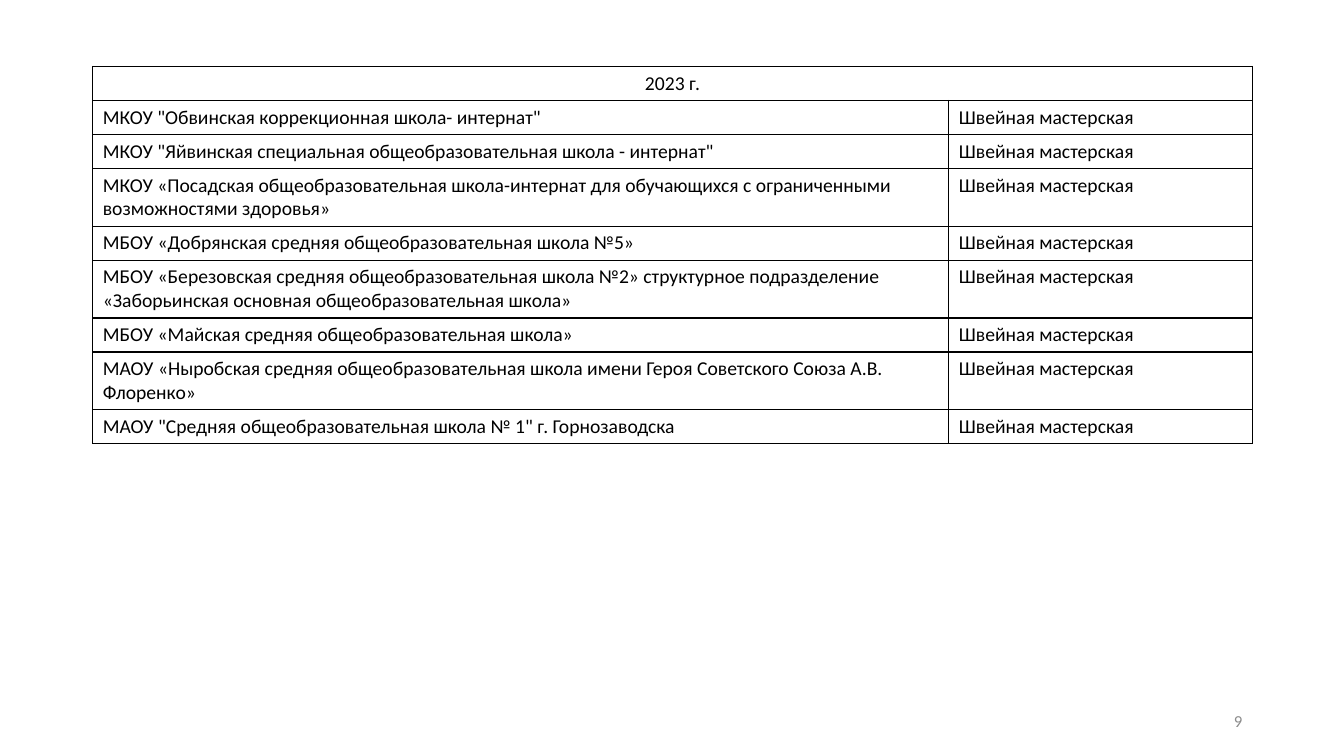
from lxml import etree
from pptx import Presentation
from pptx.dml.color import RGBColor
from pptx.enum.text import MSO_ANCHOR, PP_ALIGN
from pptx.oxml.ns import qn
from pptx.util import Inches, Pt

LEFT, CENTER, RIGHT = PP_ALIGN.LEFT, PP_ALIGN.CENTER, PP_ALIGN.RIGHT
MIDDLE = MSO_ANCHOR.MIDDLE

# Content
YEAR = "2023 г."
WORKSHOP = "Швейная мастерская"
SCHOOLS = [
    'МКОУ "Обвинская коррекционная школа- интернат"',
    'МКОУ "Яйвинская специальная общеобразовательная школа - интернат"',
    "МКОУ «Посадская общеобразовательная школа-интернат для обучающихся "
    "с ограниченными возможностями здоровья»",
    "МБОУ «Добрянская средняя общеобразовательная школа №5»",
    "МБОУ «Березовская средняя общеобразовательная школа №2» структурное "
    "подразделение «Заборьинская основная общеобразовательная школа»",
    "МБОУ «Майская средняя общеобразовательная школа»",
    "МАОУ «Ныробская средняя общеобразовательная школа имени Героя "
    "Советского Союза А.В. Флоренко»",
    'МАОУ "Средняя общеобразовательная школа № 1" г. Горнозаводска',
]
PAGE_NUMBER = "9"

# Style
FONT = "Calibri"
BLACK, GREY = "000000", "8C8C8C"
COLUMN_WIDTHS = (8.49, 3.01)
YEAR_HEIGHT, SCHOOL_HEIGHT = 0.28, 0.25


def color(hex_value):
    return RGBColor.from_string(hex_value)


def write(text_frame, text, size, hex_value, align):
    paragraph = text_frame.paragraphs[0]
    paragraph.alignment = align
    run = paragraph.add_run()
    run.text = text
    run.font.name = FONT
    run.font.size = Pt(size)
    run.font.color.rgb = color(hex_value)


def outline(cell):
    properties = cell._tc.get_or_add_tcPr()
    for side in ("a:lnL", "a:lnR", "a:lnT", "a:lnB"):
        line = etree.SubElement(properties, qn(side), w=str(Pt(1)))
        fill = etree.SubElement(line, qn("a:solidFill"))
        etree.SubElement(fill, qn("a:srgbClr"), val=BLACK)


prs = Presentation()
prs.slide_width, prs.slide_height = Inches(13.33), Inches(7.5)
slide = prs.slides.add_slide(prs.slide_layouts[6])

# Table of schools and workshops
rows = [(YEAR, "")] + [(school, WORKSHOP) for school in SCHOOLS]
frame = slide.shapes.add_table(len(rows), len(COLUMN_WIDTHS), Inches(0.92),
                               Inches(0.66), Inches(11.5), Inches(3.7))
table = frame.table
table.first_row = table.horz_banding = False
for column, width in zip(table.columns, COLUMN_WIDTHS):
    column.width = Inches(width)
for r, values in enumerate(rows):
    table.rows[r].height = Inches(SCHOOL_HEIGHT if r else YEAR_HEIGHT)
    for c, value in enumerate(values):
        cell = table.cell(r, c)
        outline(cell)
        cell.fill.background()
        if value:
            write(cell.text_frame, value, 14, BLACK, LEFT if r else CENTER)
table.cell(0, 0).merge(table.cell(0, 1))
frame.height = Inches(3.7)

# Page number
page = slide.shapes.add_textbox(Inches(9.42), Inches(6.95), Inches(3), Inches(0.4))
page.text_frame.word_wrap = True
page.text_frame.vertical_anchor = MIDDLE
write(page.text_frame, PAGE_NUMBER, 12, GREY, RIGHT)

prs.save("out.pptx")
